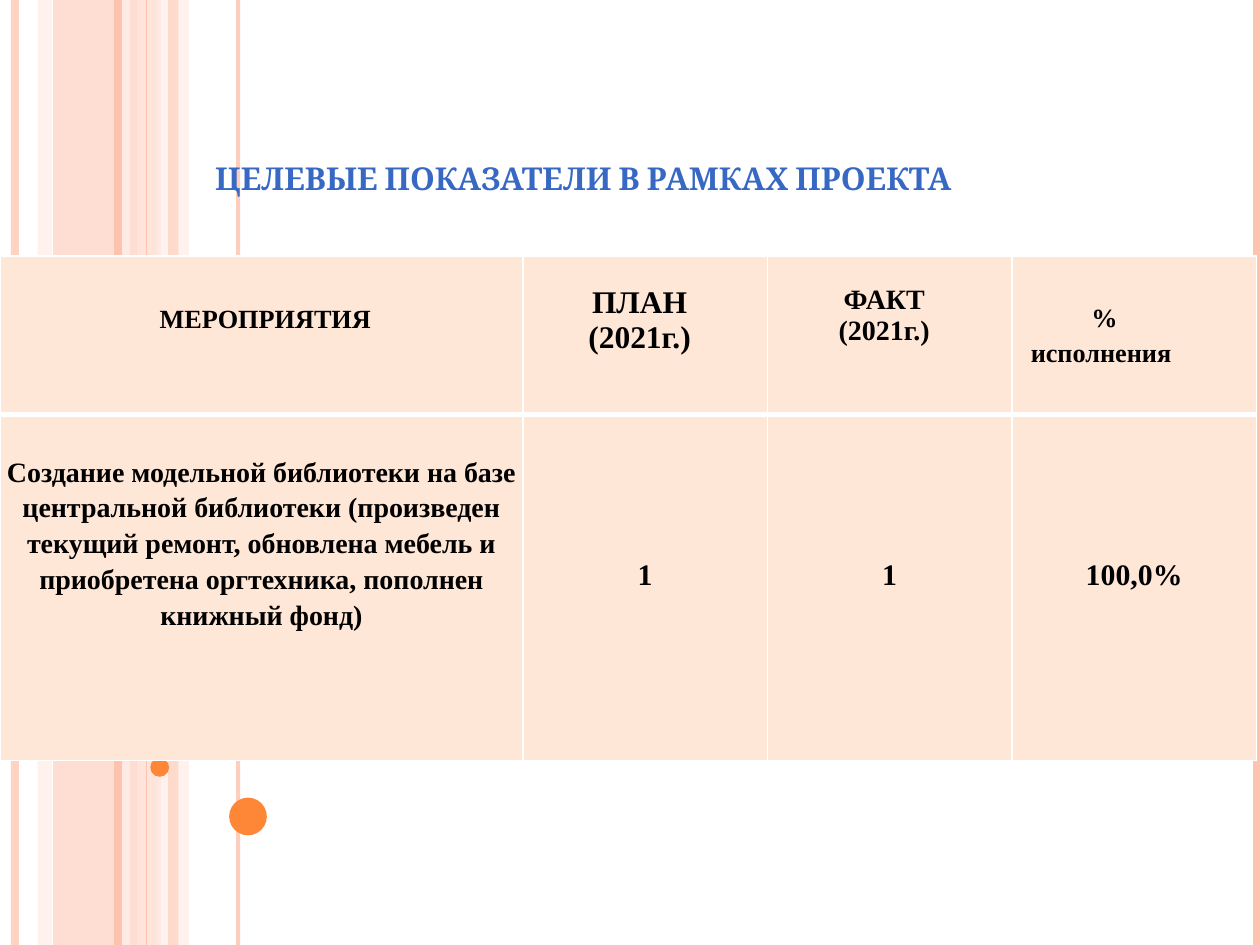
from dataclasses import dataclass

from pptx import Presentation
from pptx.dml.color import RGBColor
from pptx.enum.shapes import MSO_CONNECTOR, MSO_SHAPE
from pptx.enum.text import MSO_ANCHOR, PP_ALIGN
from pptx.oxml.ns import qn
from pptx.util import Cm, Pt
from lxml import etree

RECT, OVAL = MSO_SHAPE.RECTANGLE, MSO_SHAPE.OVAL
STRAIGHT = MSO_CONNECTOR.STRAIGHT
BOTTOM = MSO_ANCHOR.BOTTOM
LEFT, CENTER = PP_ALIGN.LEFT, PP_ALIGN.CENTER

PEACH = RGBColor(0xFE, 0xC3, 0xAE)
LIGHT_PEACH = RGBColor(0xFF, 0xD9, 0xCE)
PALE_PEACH = RGBColor(0xFF, 0xED, 0xE8)
ORANGE = RGBColor(0xFE, 0x86, 0x37)
CELL_FILL = RGBColor(0xFF, 0xE7, 0xD7)
WHITE = RGBColor(0xFF, 0xFF, 0xFF)
BLACK = RGBColor(0, 0, 0)
BLUE = RGBColor(0x36, 0x68, 0xC4)

WIDTH, HEIGHT = 25.4, 19.05
TITLE_FONT, TABLE_FONT = "Cambria", "Times New Roman"


@dataclass
class Band:
    left: float
    width: float
    color: RGBColor
    alpha: int


@dataclass
class Stripe:
    x: float
    weight: float
    color: RGBColor
    alpha: int = 100


@dataclass
class Dot:
    left: float
    top: float
    size: float


@dataclass
class CellText:
    text: str
    size: float
    top: float
    left: float = 0
    right: float = 0
    align: PP_ALIGN = CENTER
    spacing: float = 1.0
    first_line: float = 0


BANDS = [
    Band(1.07, 1.69, PEACH, 54),
    Band(0.76, 0.29, LIGHT_PEACH, 36),
    Band(2.75, 0.5, LIGHT_PEACH, 70),
    Band(3.18, 0.63, PALE_PEACH, 71),
]
STRIPES = [
    Stripe(0.3, 4.5, PEACH, 73),
    Stripe(2.54, 4.5, PALE_PEACH, 83),
    Stripe(2.37, 4.5, PEACH),
    Stripe(4.8, 2.25, PEACH, 82),
    Stripe(2.96, 0.75, PEACH),
    Stripe(25.33, 4.5, PEACH),
]
TOP_BAND = Band(3.39, 0.21, PEACH, 51)
DOTS = [Dot(3.03, 15.28, 0.38), Dot(4.62, 16.08, 0.76)]

COLUMNS = [10.54, 4.93, 4.93, 4.93]
ROWS = [3.2, 6.97]
CELLS = [
    [
        CellText("МЕРОПРИЯТИЯ", 15, 1.0, left=0.16),
        CellText("ПЛАН\n(2021г.)", 18, 0.59, right=0.22),
        CellText("ФАКТ\n(2021г.)", 16, 0.57, right=0.22),
        CellText("% исполнения", 15, 0.86, left=0.38, align=LEFT,
                 spacing=1.2, first_line=1.22),
    ],
    [
        CellText("Создание модельной библиотеки на базе центральной библиотеки "
                 "(произведен текущий ремонт, обновлена мебель и приобретена "
                 "оргтехника, пополнен книжный фонд)", 16, 0.76, spacing=1.15),
        *[CellText(value, 17, 2.9) for value in ("1", "1", "100,0%")],
    ],
]


def set_alpha(shape, percent: int) -> None:
    if percent < 100:
        color = next(shape._element.spPr.iter(qn("a:srgbClr")))
        etree.SubElement(color, qn("a:alpha"), val=str(percent * 1000))


def add_filled(s, kind, left: float, top: float, width: float, height: float,
               color: RGBColor, alpha: int = 100) -> None:
    shape = s.shapes.add_shape(kind, Cm(left), Cm(top), Cm(width), Cm(height))
    shape.shadow.inherit = False
    shape.fill.solid()
    shape.fill.fore_color.rgb = color
    shape.line.fill.background()
    set_alpha(shape, alpha)


def add_band(s, band: Band) -> None:
    add_filled(s, RECT, band.left, 0, band.width, HEIGHT, band.color, band.alpha)


def add_stripe(s, stripe: Stripe) -> None:
    line = s.shapes.add_connector(STRAIGHT, Cm(stripe.x), 0, Cm(stripe.x), Cm(HEIGHT))
    line.line.color.rgb = stripe.color
    line.line.width = Pt(stripe.weight)
    set_alpha(line, stripe.alpha)
    etree.SubElement(line._element.spPr, qn("a:effectLst"))


def format_paragraph(p, font: str, size: float, color: RGBColor) -> None:
    for r in p.runs:
        r.font.name = font
        r.font.size = Pt(size)
        r.font.bold = True
        r.font.color.rgb = color


def add_title(s, text: str) -> None:
    tf = s.shapes.add_textbox(Cm(4.09), Cm(1.52), Cm(20), Cm(2.57)).text_frame
    tf.word_wrap = True
    tf.vertical_anchor = BOTTOM
    tf.text = text
    format_paragraph(tf.paragraphs[0], TITLE_FONT, 18, BLUE)


def set_borders(cell, top: float, bottom: float) -> None:
    props = cell._tc.get_or_add_tcPr()
    for side, weight in (("L", 1), ("R", 1), ("T", top), ("B", bottom)):
        ln = etree.SubElement(props, qn(f"a:ln{side}"), w=str(Pt(weight)))
        fill = etree.SubElement(ln, qn("a:solidFill"))
        etree.SubElement(fill, qn("a:srgbClr"), val=str(WHITE))


def fill_cell(cell, content: CellText) -> None:
    cell.fill.solid()
    cell.fill.fore_color.rgb = CELL_FILL
    cell.margin_left, cell.margin_right = Cm(content.left), Cm(content.right)
    cell.margin_top, cell.margin_bottom = Cm(content.top), 0
    tf = cell.text_frame
    tf.text = content.text
    for p in tf.paragraphs:
        p.alignment = content.align
        p.line_spacing = content.spacing
        if content.first_line:
            p._p.get_or_add_pPr().set("indent", str(Cm(content.first_line)))
        format_paragraph(p, TABLE_FONT, content.size, BLACK)


def add_indicators(s) -> None:
    table = s.shapes.add_table(len(ROWS), len(COLUMNS), 0, Cm(5.16),
                               Cm(sum(COLUMNS)), Cm(sum(ROWS))).table
    table.first_row = table.horz_banding = False
    for column, width in zip(table.columns, COLUMNS):
        column.width = Cm(width)
    for i, (row, height) in enumerate(zip(table.rows, ROWS)):
        row.height = Cm(height)
        for cell, content in zip(row.cells, CELLS[i]):
            set_borders(cell, top=3 if i else 1, bottom=1 if i else 3)
            fill_cell(cell, content)


def main() -> None:
    prs = Presentation()
    prs.slide_width, prs.slide_height = Cm(WIDTH), Cm(HEIGHT)
    s = prs.slides.add_slide(prs.slide_layouts[6])
    for band in BANDS:
        add_band(s, band)
    for stripe in STRIPES:
        add_stripe(s, stripe)
    add_band(s, TOP_BAND)
    for dot in DOTS:
        add_filled(s, OVAL, dot.left, dot.top, dot.size, dot.size, ORANGE)
    add_title(s, "ЦЕЛЕВЫЕ ПОКАЗАТЕЛИ В РАМКАХ ПРОЕКТА")
    add_indicators(s)
    prs.save("out.pptx")


if __name__ == "__main__":
    main()
